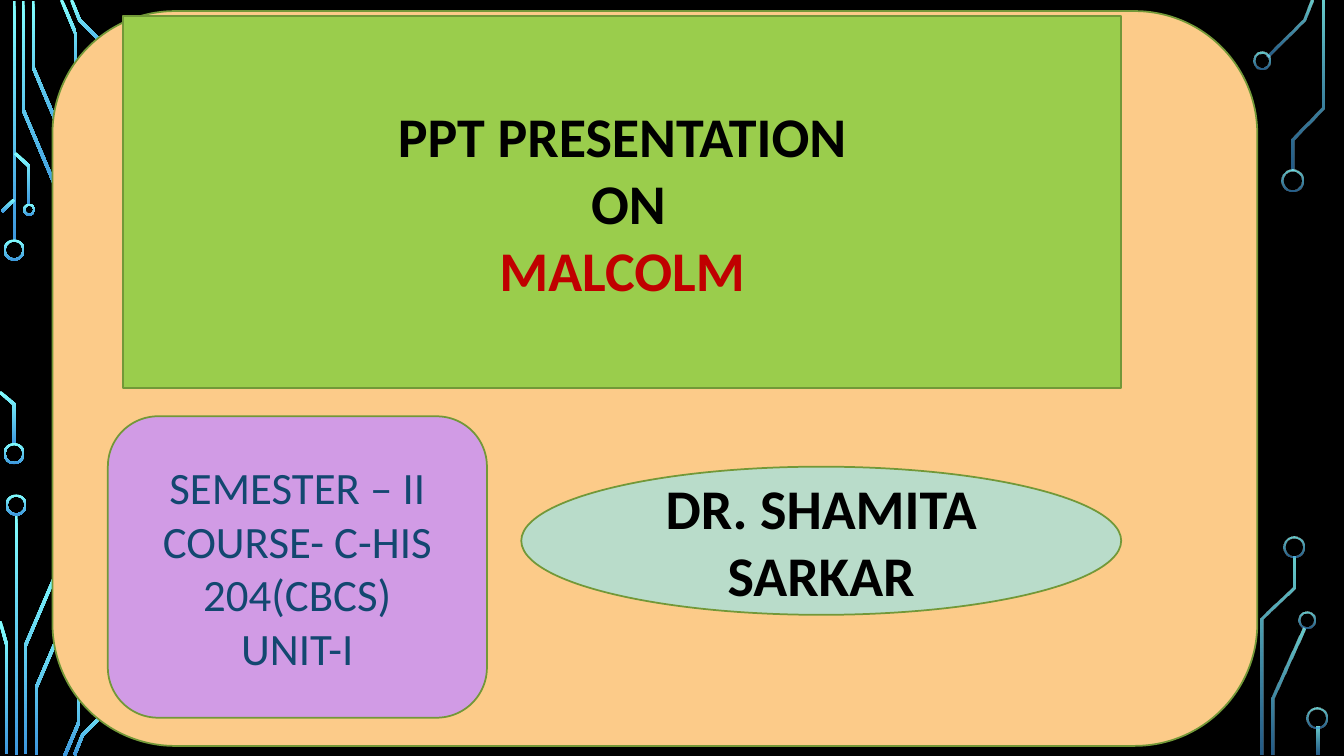
from lxml import etree
from pptx import Presentation
from pptx.dml.color import RGBColor
from pptx.enum import shapes as kinds, text
from pptx.oxml.ns import qn
from pptx.util import Inches, Pt

HUES = {
    "night": "000000", "cyan": "82FFFF", "blue": "3D97DE",
    "peach": "FCCB89", "green": "9ACD4C", "lilac": "D19BE5",
    "mint": "B9DCCA", "edge": "729838", "ink": "000000",
    "red": "C00000", "navy": "134770",
}
ROUND = kinds.MSO_SHAPE.ROUNDED_RECTANGLE
OVAL = kinds.MSO_SHAPE.OVAL
DONUT = kinds.MSO_SHAPE.DONUT
TRACE = 0.03
RIM = 0.02

LEFT = {
    "traces": [
        [(0.14, 0.01), (0.14, 2.4)],
        [(0.23, 0.01), (0.23, 1.09), (0.61, 1.99)],
        [(0.33, 0.01), (0.33, 0.67), (0.71, 1.57)],
        [(0.61, 0), (0.75, 0.33), (0.75, 1)],
        [(0.71, 0), (0.79, 0.2), (1.16, 0.57)],
        [(0.02, 2.1), (0.14, 1.98)],
        [(0, 3.89), (0.14, 4.01), (0.14, 4.41)],
        [(0.15, 1.52), (0.29, 1.65), (0.29, 2.03)],
        [(0.16, 5.1), (0.16, 7.49)],
        [(0.25, 7.48), (0.25, 6.41), (0.63, 5.52)],
        [(0, 6.16), (0.07, 6.41), (0.07, 7.48)],
        [(0.36, 7.49), (0.36, 6.82), (0.74, 5.93)],
        [(0.64, 7.5), (0.78, 7.17), (0.78, 6.5)],
        [(0.74, 7.49), (0.82, 7.29), (1.18, 6.93)],
    ],
    "rings": [(0.14, 2.48, 0.21), (0.14, 4.5, 0.21),
              (0.29, 2.08, 0.12), (0.16, 5.01, 0.21)],
    "alphas": (100, 100),
}
RIGHT = {
    "traces": [
        [(0.17, 0.56), (0.53, 0.2), (0.61, 0)],
        [(0.23, 7.49), (0.23, 6.93), (0.53, 6.23)],
        [(0.42, 1.69), (0.42, 1.38), (0.72, 1.07), (0.72, 0.01)],
        [(0.12, 7.49), (0.12, 6.14), (0.43, 5.83), (0.43, 5.52)],
        [(0.67, 7.21), (0.67, 7.49)],
    ],
    "rings": [(0.12, 0.6, 0.17), (0.42, 1.79, 0.21), (0.56, 6.15, 0.17),
              (0.43, 5.43, 0.21), (0.66, 7.12, 0.21)],
    "alphas": (80, 60),
}


def hue(name):
    return RGBColor.from_string(HUES[name])


def glow(shape, alphas):
    shape.shadow.inherit = False
    shape.line.fill.background()
    shape.fill.gradient()
    shape.fill.gradient_angle = 270
    for stop, name, alpha in zip(shape.fill.gradient_stops,
                                 ("cyan", "blue"), alphas):
        stop.color.rgb = hue(name)
    if min(alphas) < 100:
        tones = shape._element.spPr.iter(qn("a:srgbClr"))
        for tone, alpha in zip(list(tones), alphas):
            etree.SubElement(tone, qn("a:alpha"), val=str(alpha * 1000))


def ribbon(points):
    spots = [complex(*point) for point in points]
    norms = [(b - a) / abs(b - a) * 1j for a, b in zip(spots, spots[1:])]
    sides = [], []
    for spot, m, n in zip(spots, norms[:1] + norms, norms + norms[-1:]):
        turn = 1 + (m * n.conjugate()).real
        shift = (m + n) / turn * TRACE / 2
        sides[0].append(spot + shift)
        sides[1].append(spot - shift)
    return sides[0] + sides[1][::-1]


def circuit(slide, box, traces, rings, alphas):
    left, top = box
    for points in traces:
        edge = [(Inches(left + p.real), Inches(top + p.imag))
                for p in ribbon(points)]
        form = slide.shapes.build_freeform(*edge[0], scale=1.0)
        form.add_line_segments(edge[1:], close=True)
        glow(form.convert_to_shape(), alphas)
    for x, y, size in rings:
        spot = (left + x - size / 2, top + y - size / 2, size, size)
        ring = slide.shapes.add_shape(DONUT, *map(Inches, spot))
        ring.adjustments[0] = RIM / size
        glow(ring, alphas)


def paint(shape, name):
    shape.shadow.inherit = False
    shape.fill.solid()
    shape.fill.fore_color.rgb = hue(name)
    shape.line.color.rgb = hue("edge")
    shape.line.width = Pt(1.25)


def write(shape, words, size, tints, bold):
    frame = shape.text_frame
    frame.text = words
    frame.word_wrap = True
    frame.auto_size = text.MSO_AUTO_SIZE.NONE
    frame.vertical_anchor = text.MSO_ANCHOR.MIDDLE
    look = {"name": "Calibri", "size": Pt(size), "bold": bold}
    for para, tint in zip(frame.paragraphs, tints):
        para.alignment = text.PP_ALIGN.CENTER
        for run in para.runs:
            for key, value in look.items():
                setattr(run.font, key, value)
            run.font.color.rgb = hue(tint)


def panel(slide, box, kind, name):
    shape = slide.shapes.add_shape(kind, *map(Inches, box))
    paint(shape, name)
    return shape


def heading(slide, box):
    title = slide.shapes.title
    for key, value in zip(("left", "top", "width", "height"), box):
        setattr(title, key, Inches(value))
    part = title._element
    geom = etree.SubElement(part.spPr, qn("a:prstGeom"), prst="roundRect")
    etree.SubElement(geom, qn("a:avLst"))
    paint(title, "green")
    write(title, "PPT PRESENTATION\n ON\nMALCOLM", 40,
          ("ink", "ink", "red"), True)
    part.getparent().append(part)


def course(slide, box):
    card = panel(slide, box, ROUND, "lilac")
    write(card, "SEMESTER – II\nCOURSE- C-HIS 204(CBCS)\nUNIT-I", 32,
          ["navy"] * 3, False)


def author(slide, box):
    badge = panel(slide, box, OVAL, "mint")
    write(badge, "DR. SHAMITA SARKAR", 40, ["ink"], True)


def main():
    deck = Presentation()
    deck.slide_width, deck.slide_height = Inches(13.33), Inches(7.5)
    slide = deck.slides.add_slide(deck.slide_layouts[5])
    slide.background.fill.solid()
    slide.background.fill.fore_color.rgb = hue("night")
    circuit(slide, (0, 0), **LEFT)
    circuit(slide, (12.4, 0), **RIGHT)
    panel(slide, (0.52, 0.11, 11.95, 7.29), ROUND, "peach")
    heading(slide, (1.22, 0.16, 9.9, 3.69))
    course(slide, (1.07, 4.13, 3.76, 2.99))
    author(slide, (5.17, 4.63, 5.95, 1.47))
    deck.save("out.pptx")


if __name__ == "__main__":
    main()
